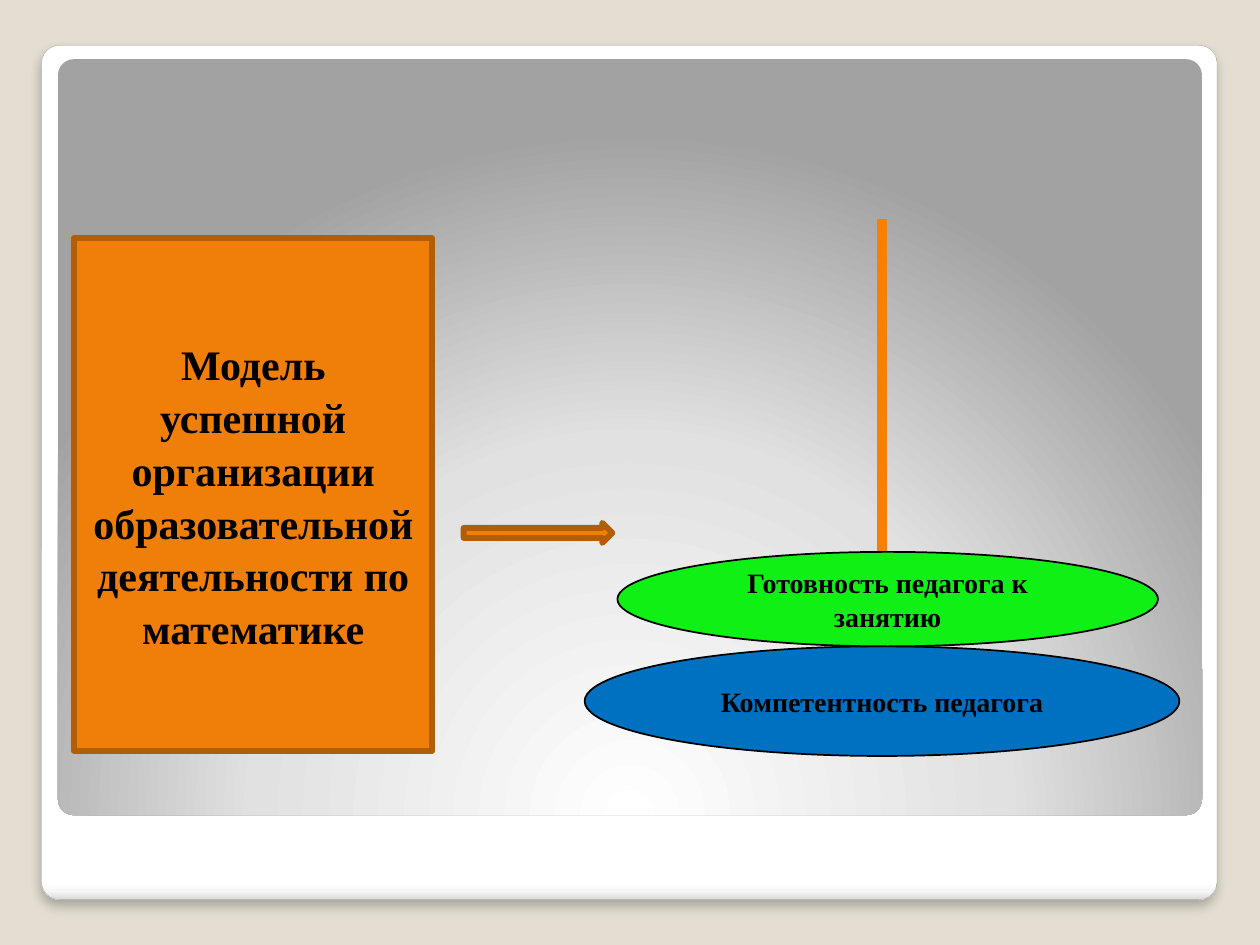
from lxml import etree
from pptx import Presentation
from pptx import util as u
from pptx.dml.color import RGBColor
from pptx.enum import shapes, text
from pptx.oxml import parse_xml
from pptx.oxml.ns import nsdecls, qn

BACKDROP = RGBColor(0xE3, 0xDE, 0xD1)
FRAME_LINE = RGBColor(0xA4, 0xA4, 0xA4)
ORANGE = RGBColor(0xF0, 0x7F, 0x09)
DARK_ORANGE = RGBColor(0xB2, 0x5E, 0x07)
STEM_ORANGE = RGBColor(0xF9, 0x7F, 0x00)
BLUE = RGBColor(0x00, 0x70, 0xC0)
GREEN = RGBColor(0x0F, 0xF1, 0x14)
BLACK = RGBColor(0x00, 0x00, 0x00)

FRAME_STOPS = [(0, "FFFFFF"), (98, "FFFFFF"), (99, "F7F7F7"), (100, "DADADA")]
PANEL_STOPS = [(0, "FFFFFF"), (55, "E1E1E1"), (100, "A2A2A2")]
DOWNWARD = '<a:lin ang="5400000" scaled="0"/>'
FROM_BELOW = ('<a:path path="circle">'
              '<a:fillToRect l="50000" t="175000" r="50000" b="-75000"/></a:path>')


def add_block(page, kind, box, fill=None, line=None, line_width=1):
    """Add a preset shape; box is left, top, width, height in inches."""
    block = page.shapes.add_shape(kind, *map(u.Inches, box))
    block.shadow.inherit = False
    if fill is not None:
        block.fill.solid()
        block.fill.fore_color.rgb = fill
    if line is None:
        block.line.fill.background()
    else:
        block.line.color.rgb = line
        block.line.width = u.Pt(line_width)
    return block


def write(block, words, size, color=BLACK, bold=True, font="Times New Roman", spacing=None):
    frame = block.text_frame
    frame.word_wrap = True
    frame.vertical_anchor = text.MSO_ANCHOR.MIDDLE
    para = frame.paragraphs[0]
    para.alignment = text.PP_ALIGN.CENTER
    if spacing:
        para.line_spacing = spacing
    span = para.add_run()
    span.text = words
    span.font.name = font
    span.font.size = u.Pt(size)
    span.font.bold = bold
    span.font.color.rgb = color


def fill_gradient(block, stops, direction):
    marks = "".join(f'<a:gs pos="{place * 1000}"><a:srgbClr val="{color}"/></a:gs>'
                    for place, color in stops)
    gradient = parse_xml(f'<a:gradFill {nsdecls("a")} rotWithShape="1">'
                         f'<a:gsLst>{marks}</a:gsLst>{direction}</a:gradFill>')
    block.fill.background()
    properties = block._element.spPr
    properties.replace(properties.find(qn("a:noFill")), gradient)


def add_soft_shadow(block):
    effects = block._element.spPr.find(qn("a:effectLst"))
    effects.append(parse_xml(
        f'<a:outerShdw {nsdecls("a")} blurRad="{u.Pt(6)}" dist="{u.Pt(4)}" dir="5400000" '
        'algn="tl" rotWithShape="0"><a:srgbClr val="000000"><a:alpha val="25000"/>'
        '</a:srgbClr></a:outerShdw>'))


def draw_backdrop(page, box):
    """Draw the white frame in box, with the grey panel inside it."""
    page.background.fill.solid()
    page.background.fill.fore_color.rgb = BACKDROP
    left, top, width, _ = box
    rounded = shapes.MSO_SHAPE.ROUNDED_RECTANGLE
    frame = add_block(page, rounded, box, line=FRAME_LINE, line_width=0.16)
    fill_gradient(frame, FRAME_STOPS, DOWNWARD)
    add_soft_shadow(frame)
    panel = add_block(page, rounded, (left + 0.13, top + 0.11, width - 0.25, 6))
    fill_gradient(panel, PANEL_STOPS, FROM_BELOW)
    for block in (frame, panel):
        block.adjustments[0] = 0.021


def draw_model(page, box):
    """Draw the model's title card in box and the arrow to its right."""
    left, top, width, _ = box
    card = add_block(page, shapes.MSO_SHAPE.RECTANGLE, box, ORANGE, DARK_ORANGE, 3.35)
    write(card, "Модель успешной организации образовательной деятельности по математике",
          size=24, spacing=1.05)
    add_block(page, shapes.MSO_SHAPE.RIGHT_ARROW, (left + width + 0.25, top + 2.26, 1.18, 0.16),
              ORANGE, DARK_ORANGE, 3.35)


def draw_pyramid(page, box):
    """Draw the stem and the two rings stacked at the bottom of box."""
    left, top, width, height = box
    base_top = top + height - 0.87
    oval = shapes.MSO_SHAPE.OVAL
    base = add_block(page, oval, (left, base_top, width, 0.87), BLUE, BLACK)
    write(base, "Компетентность педагога", size=16)

    middle = u.Inches(left + width / 2)
    stem = page.shapes.add_connector(shapes.MSO_CONNECTOR.STRAIGHT, middle, u.Inches(base_top),
                                     middle, u.Inches(top))
    stem.begin_connect(base, 0)
    stem.line.color.rgb = STEM_ORANGE
    stem.line.width = u.Pt(6)
    etree.SubElement(stem._element.spPr, qn("a:effectLst"))

    ring = add_block(page, oval, (left + 0.26, base_top - 0.75, 4.29, 0.75), GREEN, BLACK)
    write(ring, "Готовность педагога к занятию", size=16)


def main():
    deck = Presentation()
    deck.slide_width, deck.slide_height = u.Inches(10), u.Inches(7.5)
    page = deck.slides.add_slide(deck.slide_layouts[6])
    draw_backdrop(page, (0.33, 0.36, 9.33, 6.78))
    draw_model(page, (0.59, 1.89, 2.84, 4.07))
    draw_pyramid(page, (4.64, 1.74, 4.72, 4.26))
    deck.save("out.pptx")


if __name__ == "__main__":
    main()
